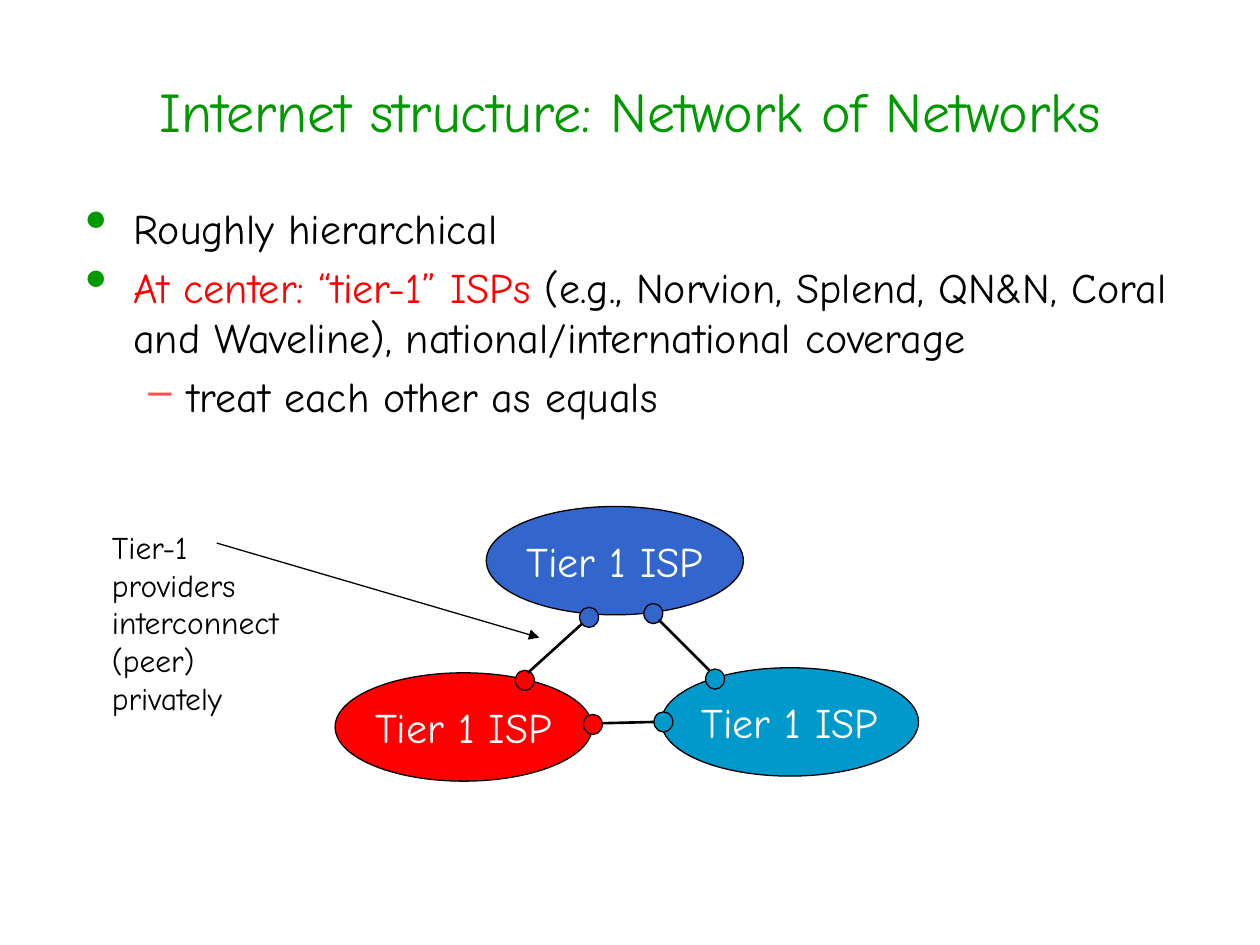
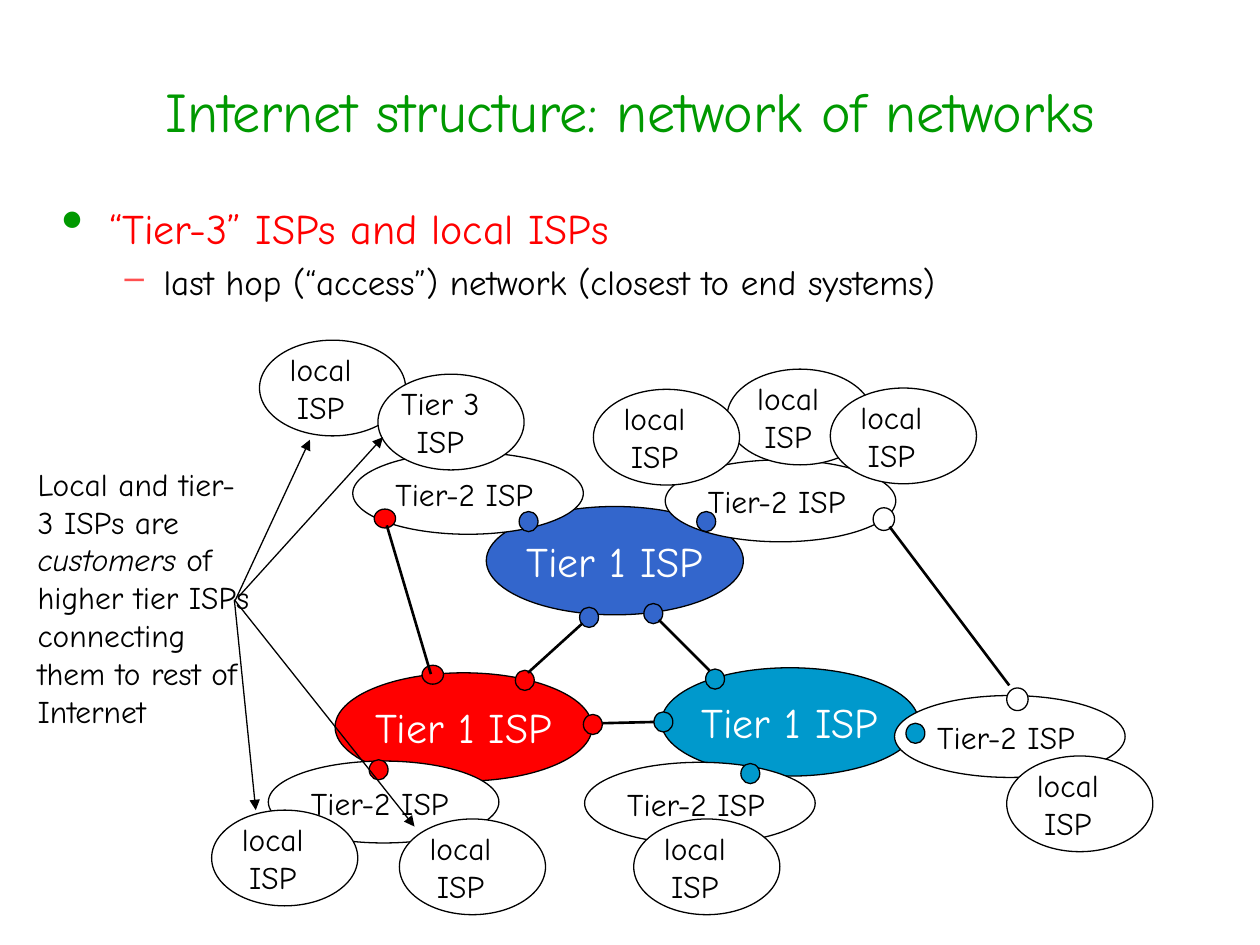
"""Build two slides on the tiered structure of the Internet."""
from lxml import etree
from pptx import Presentation
from pptx.dml.color import RGBColor
from pptx.enum.shapes import MSO_CONNECTOR, MSO_SHAPE
from pptx.enum.text import MSO_ANCHOR, MSO_AUTO_SIZE, PP_ALIGN
from pptx.oxml.ns import qn
from pptx.util import Inches, Pt

OVAL = MSO_SHAPE.OVAL
STRAIGHT = MSO_CONNECTOR.STRAIGHT
MIDDLE = MSO_ANCHOR.MIDDLE
GROW = MSO_AUTO_SIZE.SHAPE_TO_FIT_TEXT
LEFT, CENTER = PP_ALIGN.LEFT, PP_ALIGN.CENTER

FONT = "Comic Neue"
GREEN, BLACK, WHITE = "009900", "000000", "FFFFFF"
RED, BLUE, CYAN, CORAL = "FF0000", "3366CC", "0099CC", "FF5050"

TITLE_BOX = (0.58, 0.25, 8.85, 1.25)
TIER1_SIZE, TIER2_SIZE, LOCAL_SIZE = (2.04, 0.86), (1.83, 0.65), (1.16, 0.76)
DOT_SIZE, RED_DOT_SIZE, WHITE_DOT_SIZE = (0.15, 0.16), (0.17, 0.15), (0.17, 0.18)

# Bullet level: character, colour, size in percent, left margin, hanging indent
BULLETS = [("•", GREEN, 150, 0.38, 0.38), ("–", CORAL, 100, 0.81, 0.31)]

# Body paragraphs: level, size, runs of (text, colour)
HIERARCHY_BODY = [
    (0, 24, [("Roughly hierarchical", BLACK)]),
    (0, 24, [("At center: “tier-1” ISPs ", RED),
             ("(e.g., Norvion, Splend, QN&N, Coral and Waveline), "
              "national/international coverage", BLACK)]),
    (1, 24, [("treat each other as equals", BLACK)]),
]
TIER3_BODY = [
    (0, 24, [("“Tier-3” ISPs and local ISPs", RED)]),
    (1, 20, [("last hop (“access”) network (closest to end systems)", BLACK)]),
]

TIER1_ISPS = [(2.66, 5.34, RED), (3.86, 4.02, BLUE), (5.25, 5.3, CYAN)]
PEERING_DOTS = [(5.6, 5.31, CYAN), (5.11, 4.79, BLUE), (4.6, 4.82, BLUE),
                (4.09, 5.32, RED), (4.63, 5.67, RED), (5.19, 5.65, CYAN)]
PEERING_LINKS = [(4.78, 5.74, 5.19, 5.73), (5.23, 4.92, 5.63, 5.32),
                 (4.19, 5.34, 4.62, 4.95)]

# Tier-2 network corner, then its access dot
TIER2_ISPS = [
    ((5.28, 3.65), (5.53, 4.06, BLUE)),
    ((2.8, 3.59), (4.12, 4.06, BLUE)),
    ((2.13, 6.04), (2.93, 6.03, RED)),
    ((4.64, 6.05), (5.88, 6.06, CYAN)),
    ((7.1, 5.52), (7.19, 5.74, CYAN)),
]
# Dot size, colour, dot corners, link
LONG_LINKS = [
    (RED_DOT_SIZE, RED, [(2.97, 4.04), (3.35, 5.28)], (3.07, 4.17, 3.42, 5.35)),
    (WHITE_DOT_SIZE, WHITE, [(6.93, 4.03), (7.99, 5.46)], (7.06, 4.18, 8.01, 5.44)),
]
EDGE_ISPS = [
    ("local", 5.77, 2.93), ("local", 4.71, 3.09), ("local", 6.59, 3.08),
    ("local", 1.68, 6.43), ("local", 2.06, 2.7), ("Tier 3", 3, 2.97),
    ("local", 3.17, 6.5), ("local", 5.03, 6.5), ("local", 7.99, 6),
]
EDGE_LABELS = {"local": (0.12, 0.73), "Tier 3": (0.03, 0.93)}

PEERING_NOTE = [["Tier-1 providers interconnect (peer) privately"]]
PEERING_ARROW = (1.72, 4.31, 4.28, 5.06)
CUSTOMER_NOTE = [["Local and tier- 3 ISPs are ", "customers", " of"],
                 ["higher tier ISPs"],
                 ["connecting them to rest of Internet"]]
CUSTOMER_ARROWS = [(1.86, 4.78, 2.46, 3.49), (1.89, 4.74, 3.04, 3.47),
                   (1.86, 4.76, 2.03, 6.43), (1.86, 4.76, 3.29, 6.56)]


def color(hex_value):
    return RGBColor.from_string(hex_value)


def inches(values):
    return [Inches(value) for value in values]


def set_font(font, size, hex_value):
    font.name = FONT
    font.size = Pt(size)
    font.color.rgb = color(hex_value)


def add_title(slide, text):
    title = slide.shapes.title
    title.left, title.top, title.width, title.height = inches(TITLE_BOX)
    title.text_frame.text = text
    title.text_frame.vertical_anchor = MIDDLE
    paragraph = title.text_frame.paragraphs[0]
    paragraph.alignment = CENTER
    set_font(paragraph.font, 32, GREEN)


def add_bullet(paragraph, level):
    character, hex_value, percent, margin, hanging = BULLETS[level]
    properties = paragraph._p.get_or_add_pPr()
    properties.set("marL", str(Inches(margin)))
    properties.set("indent", str(-Inches(hanging)))
    bullet_color = etree.SubElement(properties, qn("a:buClr"))
    etree.SubElement(bullet_color, qn("a:srgbClr"), val=hex_value)
    etree.SubElement(properties, qn("a:buSzPct"), val=str(percent * 1000))
    etree.SubElement(properties, qn("a:buChar"), char=character)


def next_paragraph(frame, index):
    return frame.add_paragraph() if index else frame.paragraphs[0]


def add_body(slide, box, content):
    frame = slide.shapes.add_textbox(*inches(box)).text_frame
    frame.word_wrap = True
    for index, (level, size, runs) in enumerate(content):
        paragraph = next_paragraph(frame, index)
        paragraph.level = level
        add_bullet(paragraph, level)
        if index:
            paragraph.space_before = Pt(size * 0.2)
        set_font(paragraph.font, size, runs[0][1])
        for text, hex_value in runs:
            run = paragraph.add_run()
            run.text = text
            run.font.color.rgb = color(hex_value)


def add_label(slide, box, paragraphs, alignment=LEFT, wrap=False):
    """Add an 18 point text box; every second run of a paragraph is italic."""
    label = slide.shapes.add_textbox(*inches(box))
    frame = label.text_frame
    frame.word_wrap = wrap
    frame.auto_size = GROW
    for index, runs in enumerate(paragraphs):
        paragraph = next_paragraph(frame, index)
        paragraph.alignment = alignment
        set_font(paragraph.font, 18, BLACK)
        for position, text in enumerate(runs):
            run = paragraph.add_run()
            run.text = text
            if position % 2:
                run.font.italic = True
    return label


def add_oval(slide, left, top, size, fill=WHITE):
    oval = slide.shapes.add_shape(OVAL, *inches((left, top, *size)))
    oval.shadow.inherit = False
    oval.fill.solid()
    oval.fill.fore_color.rgb = color(fill)
    oval.line.color.rgb = color(BLACK)
    oval.line.width = Pt(0.75)
    return oval


def add_link(slide, ends, width=1.5, arrow=False):
    link = slide.shapes.add_connector(STRAIGHT, *inches(ends))
    link.line.color.rgb = color(BLACK)
    link.line.width = Pt(width)
    if arrow:
        etree.SubElement(link.line._get_or_add_ln(), qn("a:tailEnd"), type="triangle")
    etree.SubElement(link._element.spPr, qn("a:effectLst"))


def add_backbone(slide):
    for left, top, fill in TIER1_ISPS:
        frame = add_oval(slide, left, top, TIER1_SIZE, fill).text_frame
        frame.text = "Tier 1 ISP"
        frame.word_wrap = False
        frame.vertical_anchor = MIDDLE
        paragraph = frame.paragraphs[0]
        paragraph.alignment = CENTER
        set_font(paragraph.font, 24, WHITE)
    for left, top, fill in PEERING_DOTS:
        add_oval(slide, left, top, DOT_SIZE, fill)
    for ends in PEERING_LINKS:
        add_link(slide, ends)


def add_tier2_networks(slide):
    for (left, top), (dot_left, dot_top, fill) in TIER2_ISPS:
        add_oval(slide, left, top, TIER2_SIZE)
        add_label(slide, (left + 0.24, top + 0.13, 1.47, 0.4), [["Tier-2 ISP"]])
        add_oval(slide, dot_left, dot_top, DOT_SIZE, fill)
    for size, fill, corners, ends in LONG_LINKS:
        for left, top in corners:
            add_oval(slide, left, top, size, fill)
        add_link(slide, ends)


def add_edge_networks(slide):
    for name, left, top in EDGE_ISPS:
        add_oval(slide, left, top, LOCAL_SIZE)
        offset, width = EDGE_LABELS[name]
        add_label(slide, (left + offset, top + 0.03, width, 0.7),
                  [[name], ["ISP"]], CENTER)


def add_slide(presentation, title, body_box, body):
    slide = presentation.slides.add_slide(presentation.slide_layouts[5])
    add_title(slide, title)
    add_body(slide, body_box, body)
    add_backbone(slide)
    return slide


def main():
    presentation = Presentation()
    presentation.slide_width, presentation.slide_height = inches((10, 7.5))

    slide = add_slide(presentation, "Internet structure: Network of Networks",
                      (0.58, 1.56, 9.03, 5.08), HIERARCHY_BODY)
    add_label(slide, (0.79, 4.14, 1.71, 1.6), PEERING_NOTE, wrap=True)
    add_link(slide, PEERING_ARROW, 0.75, arrow=True)

    slide = add_slide(presentation, "Internet structure: network of networks",
                      (0.39, 1.56, 9.23, 1), TIER3_BODY)
    add_tier2_networks(slide)
    add_edge_networks(slide)
    note = add_label(slide, (0.2, 3.64, 1.97, 2.5), CUSTOMER_NOTE, wrap=True)
    note.fill.solid()
    note.fill.fore_color.rgb = color(WHITE)
    for ends in CUSTOMER_ARROWS:
        add_link(slide, ends, 0.75, arrow=True)

    presentation.save("out.pptx")


if __name__ == "__main__":
    main()
